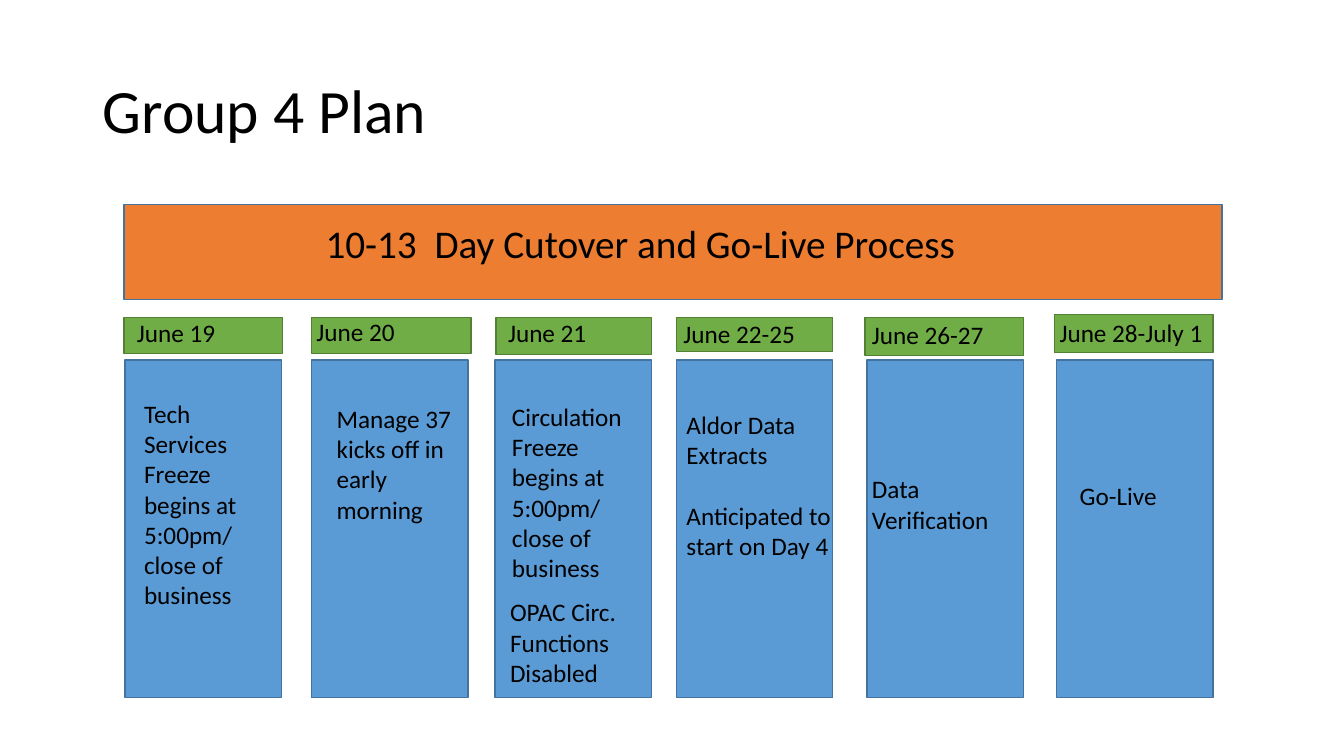
from dataclasses import dataclass

import pptx
import pptx.dml.color
import pptx.enum.shapes
import pptx.enum.text
import pptx.util

EMU_PER_PX = 9144
COLUMN_TOP, COLUMN_WIDTH, COLUMN_HEIGHT = 357, 155, 335


@dataclass(frozen=True)
class Theme:
    font: str = "Calibri"
    text: str = "000000"
    banner: str = "ED7D31"
    column: str = "5B9BD5"
    column_line: str = "43739E"
    date: str = "70AD47"
    date_line: str = "538035"
    title_size: int = 44
    banner_size: int = 28
    body_size: int = 18
    paragraph_gap: int = 22
    line_width: int = 1


@dataclass(frozen=True)
class Box:
    left: int
    top: int
    width: int
    height: int


@dataclass(frozen=True)
class Note:
    box: Box
    paragraphs: tuple[str, ...]


@dataclass(frozen=True)
class Column:
    left: int
    date_box: Box
    date: Note
    notes: tuple[Note, ...]


THEME = Theme()

TITLE = Note(Box(92, 40, 1150, 145), ("Group 4 Plan",))
BANNER_BOX = Box(123, 203, 1089, 94)
BANNER = Note(Box(313, 213, 709, 57), ("10-13  Day Cutover and Go-Live Process",))

COLUMNS = (
    Column(
        124,
        Box(123, 315, 157, 36),
        Note(Box(126, 310, 115, 40), ("June 19",)),
        (Note(Box(133, 390, 125, 222),
              ("Tech Services Freeze begins at 5:00pm/ close of business",)),),
    ),
    Column(
        309,
        Box(309, 315, 158, 36),
        Note(Box(304, 309, 115, 40), ("June 20",)),
        (Note(Box(324, 395, 135, 131), ("Manage 37 kicks off in early morning",)),),
    ),
    Column(
        491,
        Box(492, 315, 154, 37),
        Note(Box(494, 310, 115, 40), ("June 21",)),
        (
            Note(Box(498, 393, 150, 192),
                 ("Circulation Freeze begins at 5:00pm/ close of business",)),
            Note(Box(496, 587, 191, 101), ("OPAC Circ. Functions Disabled",)),
        ),
    ),
    Column(
        671,
        Box(671, 315, 155, 34),
        Note(Box(668, 311, 156, 42), ("June 22-25",)),
        (Note(Box(671, 401, 191, 162),
              ("Aldor Data Extracts", "Anticipated to start on Day 4")),),
    ),
    Column(
        860,
        Box(858, 315, 157, 38),
        Note(Box(855, 312, 156, 42), ("June 26-27",)),
        (Note(Box(855, 465, 152, 71), ("Data Verification",)),),
    ),
    Column(
        1048,
        Box(1046, 312, 157, 38),
        Note(Box(1041, 310, 181, 40), ("June 28-July 1",)),
        (Note(Box(1061, 472, 110, 40), ("Go-Live",)),),
    ),
)


def emu(length: int) -> pptx.util.Emu:
    return pptx.util.Emu(length * EMU_PER_PX)


def edges(box: Box) -> tuple[pptx.util.Emu, ...]:
    return emu(box.left), emu(box.top), emu(box.width), emu(box.height)


def color(value: str) -> pptx.dml.color.RGBColor:
    return pptx.dml.color.RGBColor.from_string(value)


def write_text(text_frame, paragraphs: tuple[str, ...], size: int) -> None:
    text_frame.word_wrap = True
    for index, text in enumerate(paragraphs):
        paragraph = text_frame.add_paragraph() if index else text_frame.paragraphs[0]
        paragraph.alignment = pptx.enum.text.PP_ALIGN.LEFT
        if index:
            paragraph.space_before = pptx.util.Pt(THEME.paragraph_gap)
        run = paragraph.add_run()
        run.text = text
        run.font.name = THEME.font
        run.font.size = pptx.util.Pt(size)
        run.font.color.rgb = color(THEME.text)


def add_title(slide, note: Note) -> None:
    title = slide.shapes.title
    title.left, title.top, title.width, title.height = edges(note.box)
    text_frame = title.text_frame
    text_frame.auto_size = pptx.enum.text.MSO_AUTO_SIZE.NONE
    text_frame.vertical_anchor = pptx.enum.text.MSO_ANCHOR.MIDDLE
    write_text(text_frame, note.paragraphs, THEME.title_size)
    text_frame.paragraphs[0].line_spacing = 0.9


def add_rectangle(slide, box: Box, fill: str, line: str) -> None:
    shape = slide.shapes.add_shape(
        pptx.enum.shapes.MSO_SHAPE.RECTANGLE, *edges(box))
    shape.shadow.inherit = False
    shape.fill.solid()
    shape.fill.fore_color.rgb = color(fill)
    shape.line.color.rgb = color(line)
    shape.line.width = pptx.util.Pt(THEME.line_width)


def add_note(slide, note: Note, size: int) -> None:
    text_frame = slide.shapes.add_textbox(*edges(note.box)).text_frame
    text_frame.auto_size = pptx.enum.text.MSO_AUTO_SIZE.SHAPE_TO_FIT_TEXT
    write_text(text_frame, note.paragraphs, size)


def add_column(slide, column: Column) -> None:
    body = Box(column.left, COLUMN_TOP, COLUMN_WIDTH, COLUMN_HEIGHT)
    add_rectangle(slide, body, THEME.column, THEME.column_line)
    add_rectangle(slide, column.date_box, THEME.date, THEME.date_line)
    for note in (column.date, *column.notes):
        add_note(slide, note, THEME.body_size)


def main() -> None:
    presentation = pptx.Presentation()
    presentation.slide_width = emu(1333)
    presentation.slide_height = emu(750)
    slide = presentation.slides.add_slide(presentation.slide_layouts[5])
    add_title(slide, TITLE)
    add_rectangle(slide, BANNER_BOX, THEME.banner, THEME.column_line)
    add_note(slide, BANNER, THEME.banner_size)
    for column in COLUMNS:
        add_column(slide, column)
    presentation.save("out.pptx")


if __name__ == "__main__":
    main()
